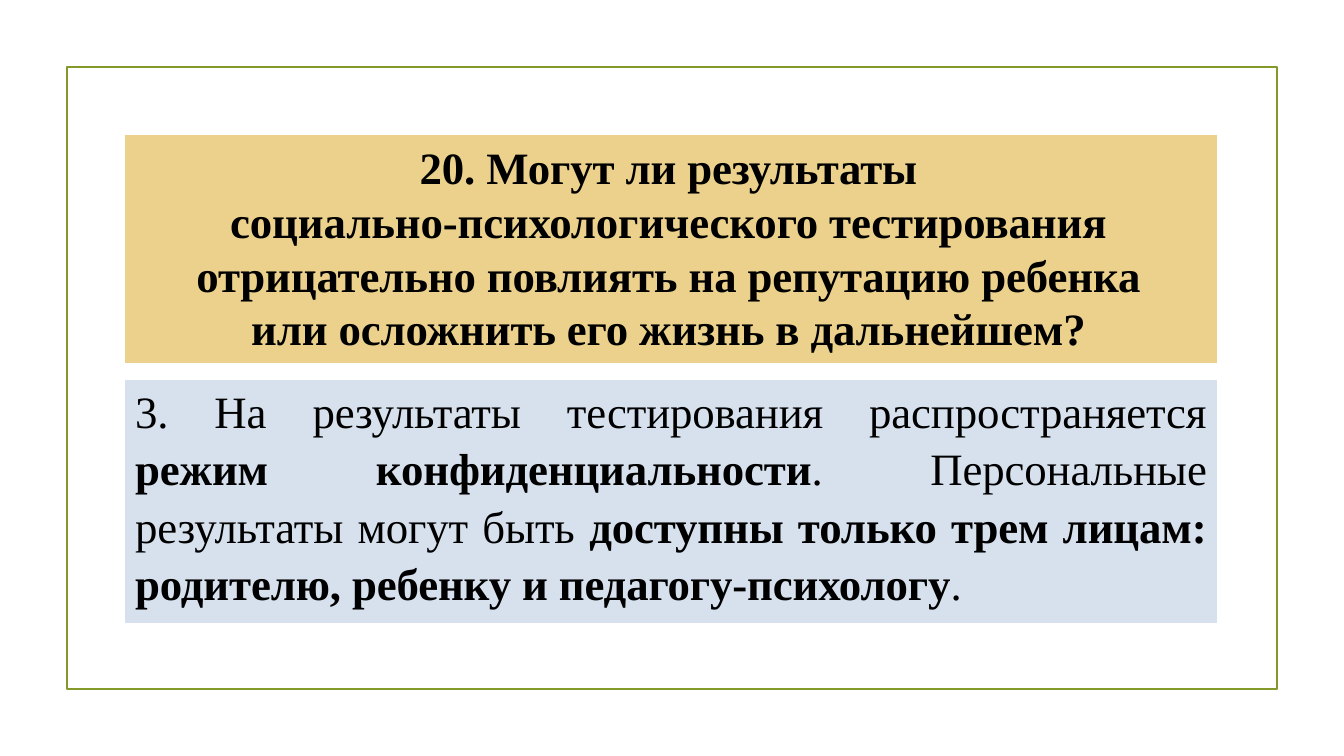
from dataclasses import dataclass

from lxml import etree
from pptx import Presentation
from pptx.dml.color import RGBColor
from pptx.enum.shapes import MSO_SHAPE
from pptx.enum.text import MSO_ANCHOR, MSO_AUTO_SIZE, PP_ALIGN
from pptx.oxml.ns import qn
from pptx.util import Inches, Pt

RECTANGLE = MSO_SHAPE.RECTANGLE
TOP = MSO_ANCHOR.TOP
NO_AUTOFIT = MSO_AUTO_SIZE.NONE
CENTER, JUSTIFY = PP_ALIGN.CENTER, PP_ALIGN.JUSTIFY

# Runs are (text, bold); "\v" is a line break.
QUESTION = [
    ("20. Могут ли результаты\v"
     "социально-психологического тестирования\v"
     "отрицательно повлиять на репутацию ребенка\v"
     "или осложнить его жизнь в дальнейшем?", True),
]
ANSWER = [
    ("3. На результаты тестирования распространяется ", False),
    ("режим конфиденциальности", True),
    (". Персональные результаты могут быть ", False),
    ("доступны только трем лицам:\vродителю, ребенку и педагогу-психологу", True),
    (".", False),
]


@dataclass(frozen=True)
class Theme:
    font: str = "Times New Roman"
    size: int = 32
    tracking: int = -10  # hundredths of a point
    text: str = "000000"
    question_fill: str = "EBD18B"
    answer_fill: str = "D6E1ED"
    frame: str = "83992A"
    frame_width: float = 1.25


THEME = Theme()
SLIDE_W, SLIDE_H = 13.33, 7.5
FRAME_MARGIN = 0.665
PANEL_LEFT, PANEL_W = 1.24, 10.83
QUESTION_TOP, QUESTION_H = 1.34, 2.26
PANEL_GAP = 0.17
ANSWER_TOP = QUESTION_TOP + QUESTION_H + PANEL_GAP
ANSWER_H = 2.41


def color(code):
    return RGBColor.from_string(code)


def place(shape, left, top, width, height):
    shape.left, shape.top = Inches(left), Inches(top)
    shape.width, shape.height = Inches(width), Inches(height)


def fill_panel(panel, runs, top, height, fill, align, pitch, insets):
    """Turn a placeholder into a coloured panel holding one paragraph."""
    place(panel, PANEL_LEFT, top, PANEL_W, height)
    panel.fill.solid()
    panel.fill.fore_color.rgb = color(fill)

    frame = panel.text_frame
    frame.word_wrap = True
    frame.auto_size = NO_AUTOFIT
    frame.vertical_anchor = TOP
    (frame.margin_left, frame.margin_top,
     frame.margin_right, frame.margin_bottom) = map(Inches, insets)

    paragraph = frame.paragraphs[0]
    paragraph.alignment = align
    paragraph.line_spacing = Pt(pitch)
    paragraph.space_before = paragraph.space_after = Pt(0)
    properties = paragraph._p.get_or_add_pPr()
    properties.set("marL", "0")
    properties.set("indent", "0")
    etree.SubElement(properties, qn("a:buNone"))
    paragraph.font.name = THEME.font
    paragraph.font.size = Pt(THEME.size)
    paragraph.font.color.rgb = color(THEME.text)

    for text, bold in runs:
        for number, line in enumerate(text.split("\v")):
            if number:
                paragraph.add_line_break()
            run = paragraph.add_run()
            run.text = line
            run.font.bold = bold
            run.font.name = THEME.font
            run.font.size = Pt(THEME.size)
            run.font.color.rgb = color(THEME.text)
            run._r.get_or_add_rPr().set("spc", str(THEME.tracking))


def add_frame(slide):
    border = slide.shapes.add_shape(
        RECTANGLE, Inches(FRAME_MARGIN), Inches(FRAME_MARGIN),
        Inches(SLIDE_W - 2 * FRAME_MARGIN), Inches(SLIDE_H - 2 * FRAME_MARGIN))
    border.shadow.inherit = False
    border.fill.background()
    border.line.color.rgb = color(THEME.frame)
    border.line.width = Pt(THEME.frame_width)


def main():
    deck = Presentation()
    deck.slide_width, deck.slide_height = Inches(SLIDE_W), Inches(SLIDE_H)
    slide = deck.slides.add_slide(deck.slide_layouts[1])
    question, answer = slide.placeholders
    fill_panel(question, QUESTION, QUESTION_TOP, QUESTION_H,
               THEME.question_fill, CENTER, 38.3, (0, 0.05, 0.05, 0))
    fill_panel(answer, ANSWER, ANSWER_TOP, ANSWER_H,
               THEME.answer_fill, JUSTIFY, 41, (0.1, 0, 0.1, 0))
    add_frame(slide)
    deck.save("out.pptx")


if __name__ == "__main__":
    main()
